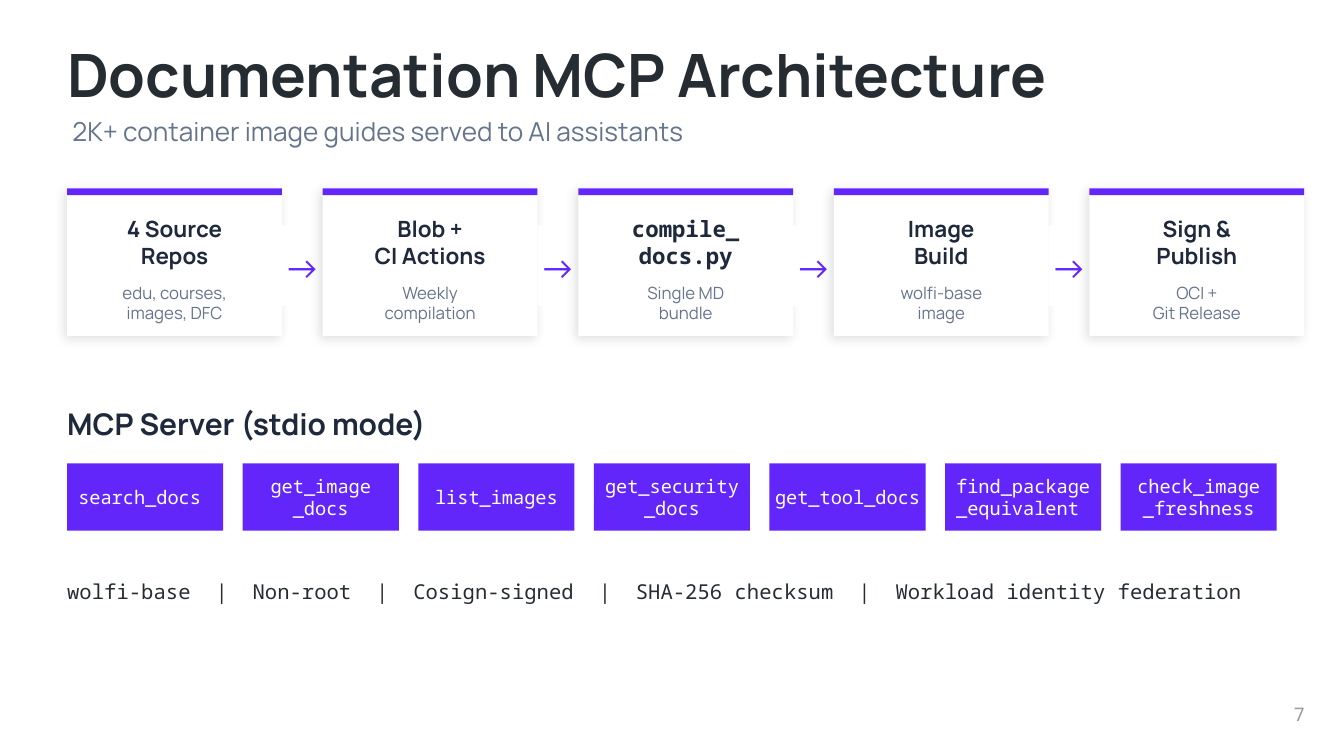
from lxml import etree
from pptx import Presentation
from pptx.dml.color import RGBColor
from pptx.enum import shapes, text
from pptx.oxml import ns
from pptx.util import Cm, Pt

SANS, MONO = "Manrope", "Noto Sans Mono"
WHITE = RGBColor(0xFF, 0xFF, 0xFF)
PURPLE = RGBColor(0x62, 0x26, 0xFB)
INK = RGBColor(0x25, 0x2D, 0x33)
NAVY = RGBColor(0x1E, 0x29, 0x3B)
SLATE = RGBColor(0x64, 0x74, 0x8B)
GREY = RGBColor(0x99, 0x99, 0x99)
LEFT, CENTER, RIGHT = text.PP_ALIGN.LEFT, text.PP_ALIGN.CENTER, text.PP_ALIGN.RIGHT
TOP, MIDDLE = text.MSO_ANCHOR.TOP, text.MSO_ANCHOR.MIDDLE

# Content: step title, its font, step detail
STEPS = [
    ("4 Source\nRepos", SANS, "edu, courses,\nimages, DFC"),
    ("Blob +\nCI Actions", SANS, "Weekly\ncompilation"),
    ("compile_\ndocs.py", MONO, "Single MD\nbundle"),
    ("Image\nBuild", SANS, "wolfi-base\nimage"),
    ("Sign &\nPublish", SANS, "OCI +\nGit Release"),
]
# \v is a line break inside a paragraph
TOOLS = ["search_docs ", "get_image\v_docs", "list_images", "get_security\v_docs",
         "get_tool_docs", "find_package\v_equivalent ", "check_image\v_freshness"]
TRAITS = ["wolfi-base", "Non-root", "Cosign-signed", "SHA-256 checksum",
          "Workload identity federation"]

# Layout in centimetres
MARGIN, BODY_W = 1.27, 22.86
CARD_W, CARD_H, CARD_GAP, CARD_Y = 4.06, 2.79, 0.77, 3.56
TOOL_W, TOOL_H, TOOL_Y = 2.95, 1.27, 8.76

prs = Presentation()
prs.slide_width, prs.slide_height = Cm(25.4), Cm(14.29)
s = prs.slides.add_slide(prs.slide_layouts[6])


def style(r, size, color, font, bold=False):
    r.font.size, r.font.name, r.font.bold = Pt(size), font, bold
    r.font.color.rgb = color


def write(sp, content, size, color, font=SANS, bold=False, align=LEFT, anchor=MIDDLE, inset=0):
    tf = sp.text_frame
    tf.word_wrap, tf.vertical_anchor = True, anchor
    tf.margin_left = tf.margin_right = tf.margin_top = tf.margin_bottom = Cm(inset)
    tf.text = content
    for p in tf.paragraphs:
        p.alignment = align
        for r in p.runs:
            style(r, size, color, font, bold)


def label(x, y, w, h, content, size, color, **kw):
    sp = s.shapes.add_textbox(Cm(x), Cm(y), Cm(w), Cm(h))
    write(sp, content, size, color, **kw)
    return sp


def box(x, y, w, h, fill):
    sp = s.shapes.add_shape(shapes.MSO_SHAPE.RECTANGLE, Cm(x), Cm(y), Cm(w), Cm(h))
    sp.shadow.inherit = False
    sp.fill.solid()
    sp.fill.fore_color.rgb = fill
    sp.line.fill.background()
    return sp


def soft_shadow(sp):
    effects = sp._element.spPr.find(ns.qn("a:effectLst"))
    shadow = etree.SubElement(effects, ns.qn("a:outerShdw"), blurRad=str(Pt(6)),
                              dist=str(Pt(2)), dir=str(135 * 60000),
                              algn="bl", rotWithShape="0")
    color = etree.SubElement(shadow, ns.qn("a:srgbClr"), val="000000")
    etree.SubElement(color, ns.qn("a:alpha"), val="12000")


# Heading and page number
label(MARGIN, 0.64, 20.32, 1.52, "Documentation MCP Architecture", 32, INK, bold=True)
label(1.37, 2.03, 20.09, 0.89, "2K+ container image guides served to AI assistants", 14, SLATE)
label(23.39, 12.95, 1.52, 1.09, "7", 10, GREY, font=MONO, align=RIGHT, inset=0.25)

# Pipeline cards, with an arrow in each gap
for i, (title, font, detail) in enumerate(STEPS):
    x = MARGIN + i * (CARD_W + CARD_GAP)
    soft_shadow(box(x, CARD_Y, CARD_W, CARD_H, WHITE))
    box(x, CARD_Y, CARD_W, 0.13, PURPLE)
    label(x, CARD_Y + 0.25, CARD_W, 1.52, title, 12, NAVY, font=font, bold=True, align=CENTER)
    label(x, CARD_Y + 1.78, CARD_W, 0.89, detail, 9, SLATE, align=CENTER, anchor=TOP)
    if i < len(STEPS) - 1:
        arrow = box(x + CARD_W, CARD_Y + 0.71, CARD_GAP, 1.52, WHITE)
        write(arrow, "→", 20, PURPLE, align=CENTER)

# Server tools, spread evenly over the body width
label(MARGIN, 7.49, 10.16, 1.02, "MCP Server (stdio mode)", 16, NAVY, bold=True)
pitch = (BODY_W - TOOL_W) / (len(TOOLS) - 1)
for i, tool in enumerate(TOOLS):
    sp = box(MARGIN + i * pitch, TOOL_Y, TOOL_W, TOOL_H, PURPLE)
    write(sp, tool, 10, WHITE, font=MONO, align=CENTER)

# Image traits, with double-width spaces around each bar
p = label(MARGIN, 10.67, BODY_W, 1.02, TRAITS[0], 11, INK, font=MONO).text_frame.paragraphs[0]
for trait in TRAITS[1:]:
    for part in (" ", "|", " ", trait):
        r = p.add_run()
        r.text = part
        style(r, 11, INK, MONO)
        if part == " ":
            r.font._element.set("spc", "660")

prs.save("out.pptx")
